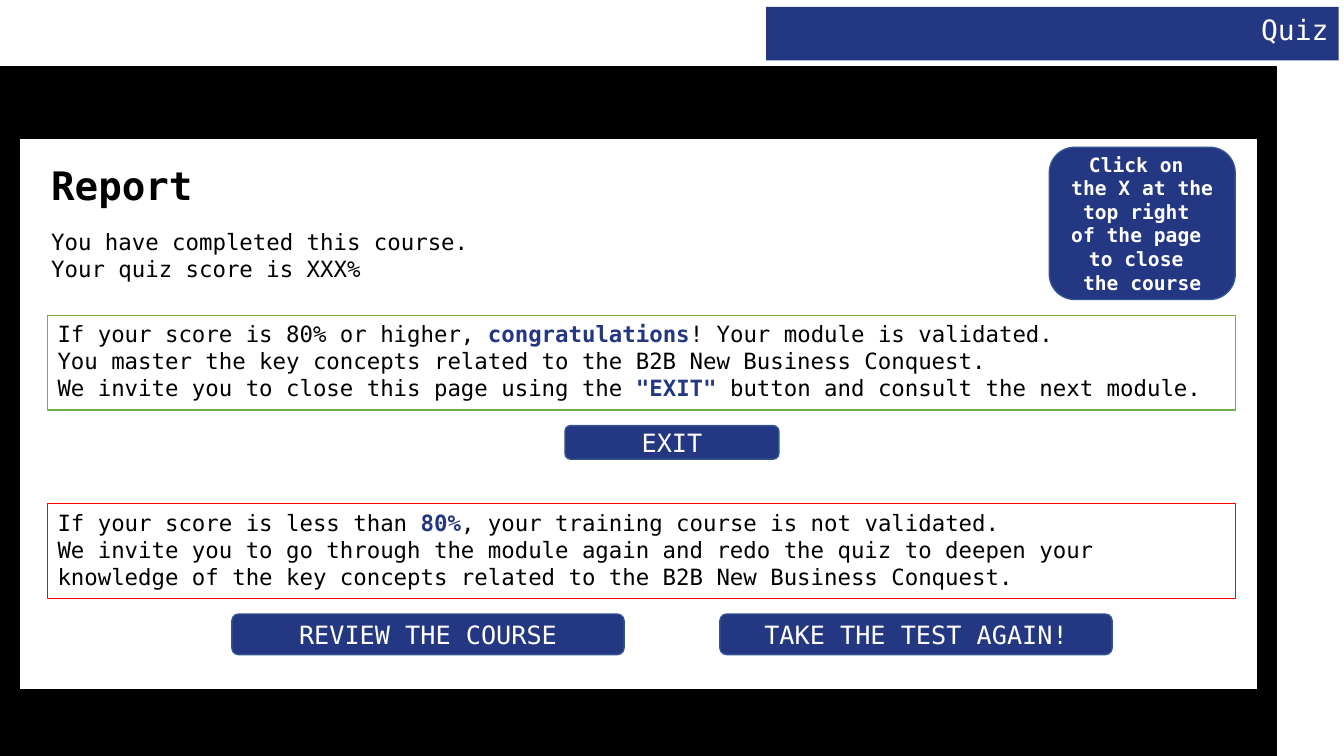
import pptx
import pptx.dml.color
import pptx.enum.shapes
import pptx.enum.text
import pptx.util

Pt = pptx.util.Pt
Shape = pptx.enum.shapes.MSO_SHAPE
Align = pptx.enum.text.PP_ALIGN
Anchor = pptx.enum.text.MSO_ANCHOR

FONT = "DejaVu Sans Mono"
COLORS = {
    "navy": "243782",
    "edge": "325491",
    "black": "000000",
    "white": "FFFFFF",
    "green": "70AD47",
    "red": "FF0000",
}


def color(name):
    return pptx.dml.color.RGBColor.from_string(COLORS[name])


def add_block(kind, place, fill=None, line=None, width=1):
    block = page.shapes.add_shape(kind, *map(Pt, place))
    block.shadow.inherit = False
    if fill:
        block.fill.solid()
        block.fill.fore_color.rgb = color(fill)
    else:
        block.fill.background()
    if line:
        block.line.color.rgb = color(line)
        block.line.width = Pt(width)
    else:
        block.line.fill.background()
    return block


def write(box, paras, size, ink="black", align=Align.LEFT, anchor=Anchor.TOP, spacing=None):
    """Each paragraph is a list of (text, ink or None, bold) spans."""
    frame = box.text_frame
    frame.word_wrap = True
    frame.auto_size = pptx.enum.text.MSO_AUTO_SIZE.NONE
    frame.vertical_anchor = anchor
    for index, spans in enumerate(paras):
        para = frame.add_paragraph() if index else frame.paragraphs[0]
        para.alignment = align
        if spacing:
            para.line_spacing = spacing
        for text, span_ink, bold in spans:
            span = para.add_run()
            span.text = text
            span.font.name = FONT
            span.font.size = Pt(size)
            span.font.bold = bold
            span.font.color.rgb = color(span_ink or ink)


deck = pptx.Presentation()
deck.slide_width, deck.slide_height = Pt(960), Pt(540)
page = deck.slides.add_slide(deck.slide_layouts[5])

# Header band and framed panel
add_block(Shape.RECTANGLE, (547.2, 5, 409, 38.2), "navy")
add_block(Shape.RECTANGLE, (0, 47.3, 911.5, 492.7), "black", "black")
add_block(Shape.RECTANGLE, (13.8, 98.8, 884.9, 393.6), "white", "black")

# Title, in front of the band
title = page.shapes.title
title.left, title.top, title.width, title.height = map(Pt, (369.4, 6.2, 586.8, 32))
write(title, [[("Quiz", None, False)]], 20, "white", Align.RIGHT, Anchor.MIDDLE, 0.9)
page.shapes.element.append(title.element)

# Report heading and score
heading = page.shapes.add_textbox(*map(Pt, (29.5, 115.2, 774.7, 48.2)))
write(heading, [[("Report", None, True)]], 28, spacing=0.9)
score = page.shapes.add_textbox(*map(Pt, (29.5, 159.2, 352, 46)))
write(score, [[("You have completed this course.", None, False)],
              [("Your quiz score is XXX%", None, False)]], 16)

# Outcome boxes
outcomes = [
    (225.5, "green", [
        [("If your score is 80% or higher, ", None, False),
         ("congratulations", "navy", True),
         ("! Your module is validated.", None, False)],
        [("You master the key concepts related to the B2B New Business Conquest.", None, False)],
        [("We invite you to close this page using the ", None, False),
         ('"EXIT" ', "navy", True),
         ("button and consult the next module.", None, False)],
    ]),
    (360, "red", [
        [("If your score is less than ", None, False),
         ("80%", "navy", True),
         (", your training course is not validated.", None, False)],
        [("We invite you to go through the module again and redo the quiz to deepen your "
          "knowledge of the key concepts related to the B2B New Business Conquest.", None, False)],
    ]),
]
for top, edge, paras in outcomes:
    outcome = add_block(Shape.RECTANGLE, (34, top, 848.6, 67.4), None, edge, 0.75)
    write(outcome, paras, 16)

# Buttons and closing hint
hint = ["Click on ", "the X at the top right ", "of the page ", "to close ", "the course"]
buttons = [
    ((403.6, 304, 152.8, 24), ["EXIT"], 18, False),
    ((165.6, 438.6, 280.2, 29), ["REVIEW THE COURSE"], 18, False),
    ((514.2, 438.6, 280.2, 29), ["TAKE THE TEST AGAIN!"], 18, False),
    ((749.5, 105.2, 132.8, 108.7), hint, 14, True),
]
for place, lines, size, bold in buttons:
    button = add_block(Shape.ROUNDED_RECTANGLE, place, "navy", "edge")
    write(button, [[(text, None, bold)] for text in lines], size, "white",
          Align.CENTER, Anchor.MIDDLE)

deck.save("out.pptx")
